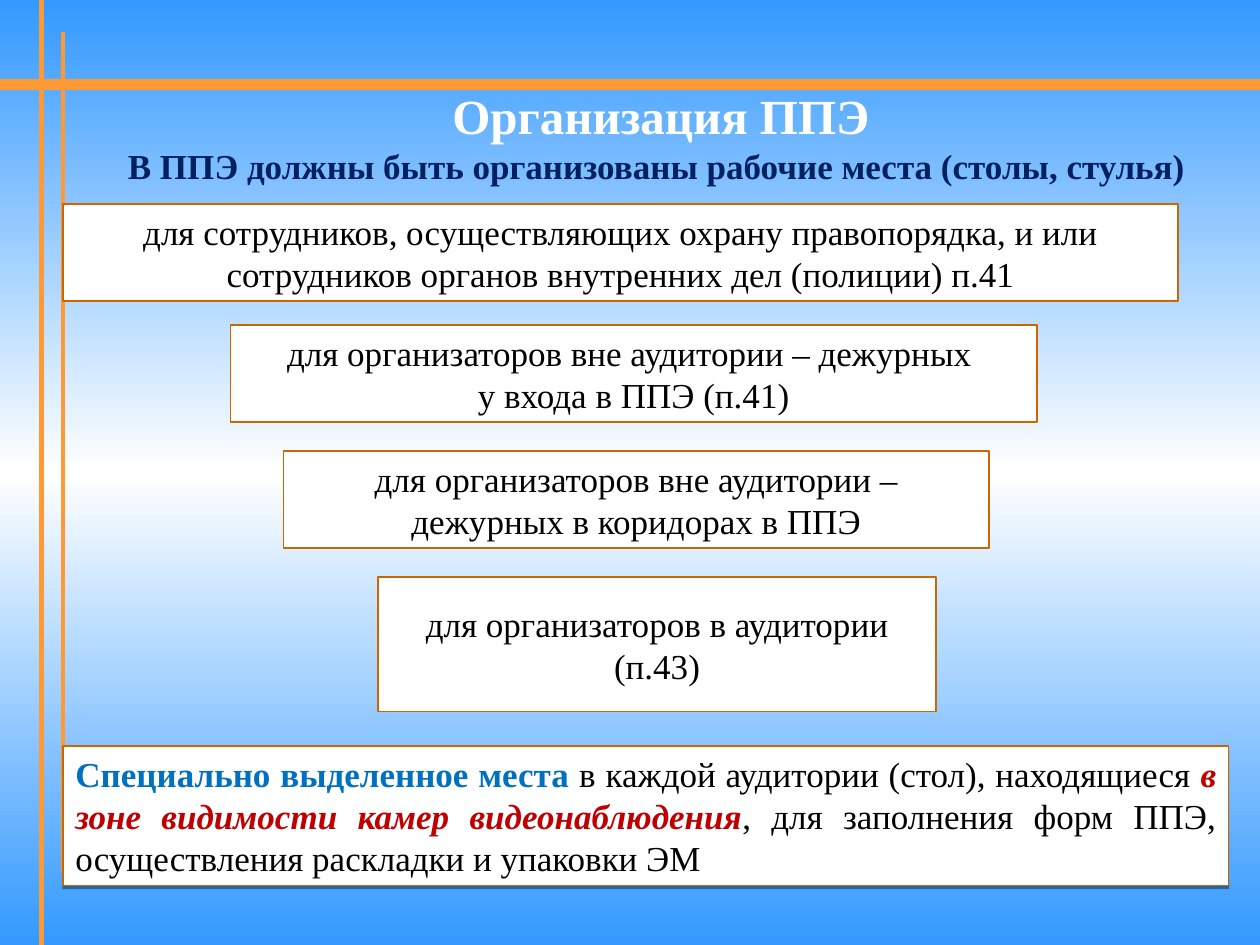
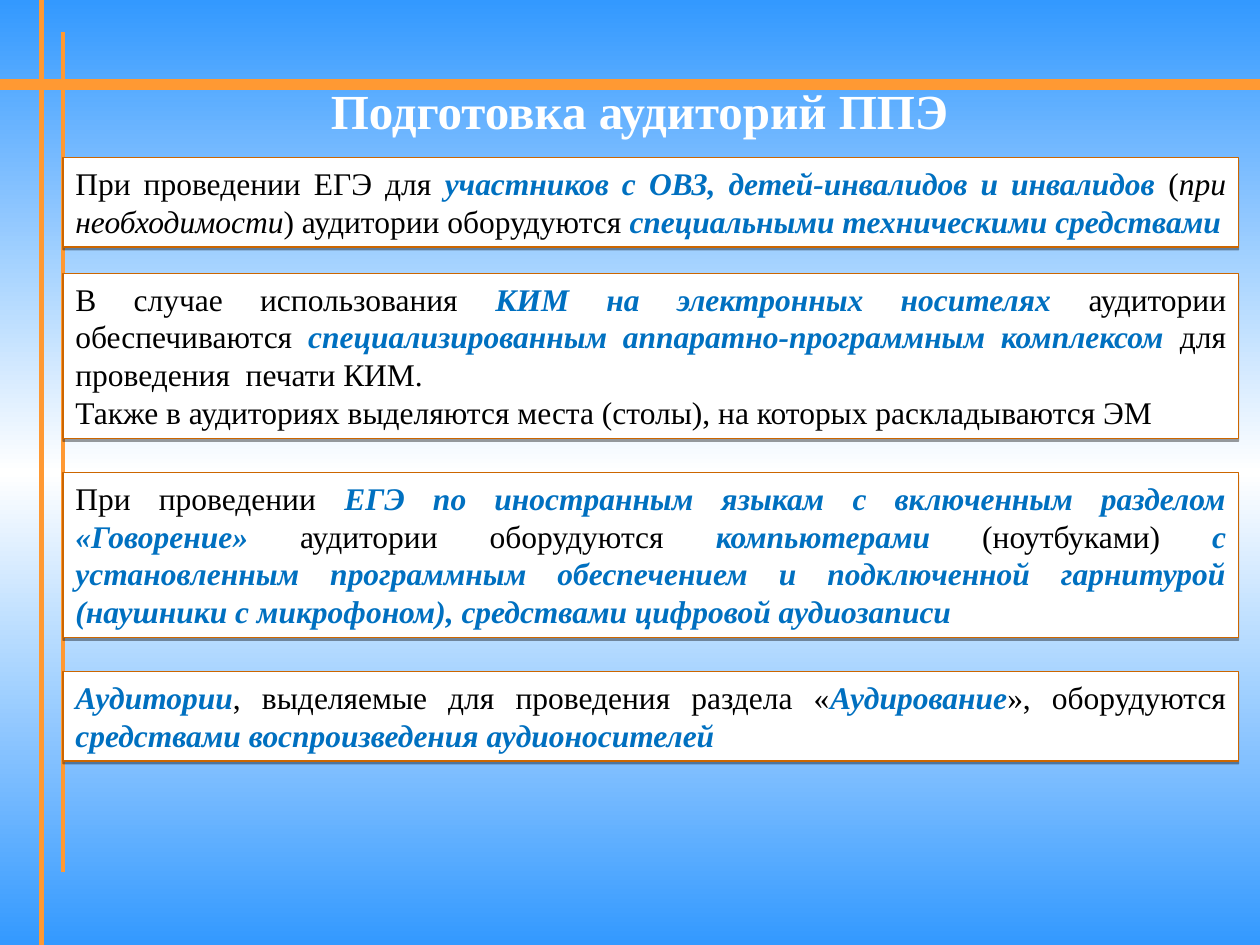
import copy
from dataclasses import dataclass

import pptx
import pptx.dml.color
import pptx.enum.dml
import pptx.enum.shapes
import pptx.enum.text
import pptx.oxml
import pptx.oxml.ns
import pptx.util
from pptx.util import Inches

RGBColor = pptx.dml.color.RGBColor
Align = pptx.enum.text.PP_ALIGN

SKY = RGBColor(0x33, 0x99, 0xFF)
WHITE = RGBColor(0xFF, 0xFF, 0xFF)
BLACK = RGBColor(0, 0, 0)
ORANGE = RGBColor(0xFF, 0x99, 0x33)
BROWN = RGBColor(0xCC, 0x66, 0x00)
NAVY = RGBColor(0x00, 0x20, 0x60)
BLUE = RGBColor(0x00, 0x70, 0xC0)
RED = RGBColor(0xC0, 0x00, 0x00)
FONT = "Times New Roman"
TITLE_ONLY = 5

STYLES = {
    "plain": dict(color=BLACK),
    "italic": dict(color=BLACK, italic=True),
    "bold": dict(color=BLUE, bold=True),
    "key": dict(color=BLUE, bold=True, italic=True),
    "alert": dict(color=RED, bold=True, italic=True),
    "title": dict(color=WHITE, bold=True, size=pptx.util.Pt(28)),
    "subtitle": dict(color=NAVY, bold=True, size=pptx.util.Pt(20)),
}

Run = tuple[str, str]  # text, style name
Paragraph = list[Run]


@dataclass
class Rule:
    x1: float
    y1: float
    x2: float
    y2: float
    width: float


@dataclass
class Box:
    left: float
    top: float
    width: float
    height: float
    paragraphs: list[Paragraph]
    size: int = 20
    align: Align = Align.CENTER
    shadow: bool = False
    inset_y: float = 0.05


@dataclass
class Page:
    title_at: tuple[float, float, float, float]
    title: list[Paragraph]
    boxes: list[Box]


RULES = [
    Rule(0, 0.67, 10, 0.67, 6),
    Rule(0.33, 0, 0.33, 7.5, 3),
    Rule(0.5, 0.25, 0.5, 6.92, 2.25),
]


def room_box(top: float, height: float, paragraphs: list[Paragraph]) -> Box:
    """Full-width justified box of the second slide."""
    return Box(0.5, top, 9.33, height, paragraphs, 18, Align.JUSTIFY, True)


PAGES = [
    Page(
        (0.66, 0.83, 9.17, 0.5),
        [
            [("Организация ППЭ", "title")],
            [("В ППЭ должны быть организованы рабочие места (столы, стулья) ", "subtitle")],
        ],
        [
            Box(0.5, 1.62, 8.85, 0.77, [[(
                "для сотрудников, осуществляющих охрану правопорядка, и или "
                "сотрудников органов внутренних дел (полиции) п.41", "plain")]]),
            Box(1.83, 2.58, 6.4, 0.77, [
                [("для организаторов вне аудитории – дежурных ", "plain")],
                [("у входа в ППЭ (п.41)", "plain")],
            ]),
            Box(2.25, 3.58, 5.6, 0.77, [[(
                "для организаторов вне аудитории – дежурных в коридорах в ППЭ", "plain")]]),
            Box(3, 4.58, 4.43, 1.07, [[(
                "для организаторов в аудитории (п.43)", "plain")]], inset_y=0.2),
            Box(0.5, 5.92, 9.25, 1.11, [[
                ("Специально выделенное места ", "bold"),
                ("в каждой аудитории (стол), находящиеся ", "plain"),
                ("в зоне видимости камер видеонаблюдения", "alert"),
                (", для заполнения форм ППЭ, осуществления раскладки и упаковки ЭМ", "plain"),
            ]], align=Align.JUSTIFY, shadow=True),
        ],
    ),
    Page(
        (0.42, 0.58, 9.31, 0.58),
        [[("Подготовка аудиторий ППЭ", "title")]],
        [
            room_box(1.25, 0.71, [[
                ("При проведении ЕГЭ для ", "plain"),
                ("участников с ОВЗ, детей-инвалидов и инвалидов ", "key"),
                ("(", "plain"),
                ("при необходимости", "italic"),
                (") аудитории оборудуются ", "plain"),
                ("специальными техническими средствами", "key"),
            ]]),
            room_box(2.17, 1.31, [
                [
                    ("В случае использования ", "plain"),
                    ("КИМ на электронных носителях ", "key"),
                    ("аудитории обеспечиваются ", "plain"),
                    ("специализированным аппаратно-программным комплексом ", "key"),
                    ("для проведения  печати КИМ.", "plain"),
                ],
                [("Также в аудиториях выделяются места (столы), "
                  "на которых раскладываются ЭМ", "plain")],
            ]),
            room_box(3.75, 1.31, [[
                ("При проведении ", "plain"),
                ("ЕГЭ по иностранным языкам с включенным разделом «Говорение» ", "key"),
                ("аудитории оборудуются ", "plain"),
                ("компьютерами", "key"),
                (" (ноутбуками) ", "plain"),
                ("с установленным программным обеспечением и подключенной гарнитурой "
                 "(наушники с микрофоном), средствами цифровой аудиозаписи", "key"),
            ]]),
            room_box(5.33, 0.71, [[
                ("Аудитории", "key"),
                (", выделяемые для проведения раздела «", "plain"),
                ("Аудирование", "key"),
                ("», оборудуются ", "plain"),
                ("средствами воспроизведения аудионосителей", "key"),
            ]]),
        ],
    ),
]


def set_background(master: pptx.slide.SlideMaster) -> None:
    fill = master.background.fill
    fill.gradient()
    fill.gradient_angle = 270
    stops = master.element.find(".//" + pptx.oxml.ns.qn("a:gsLst"))
    stops.insert(1, copy.deepcopy(stops[0]))
    for stop, color, position in zip(fill.gradient_stops, (SKY, WHITE, SKY), (0, 0.5, 1)):
        stop.color.rgb = color
        stop.position = position


def add_rule(s: pptx.slide.Slide, rule: Rule) -> None:
    line = s.shapes.add_connector(
        pptx.enum.shapes.MSO_CONNECTOR.STRAIGHT,
        *map(Inches, (rule.x1, rule.y1, rule.x2, rule.y2)))
    line.line.color.rgb = ORANGE
    line.line.width = pptx.util.Pt(rule.width)
    pptx.oxml.ns.qn("a:effectLst")
    line.element.spPr.append(pptx.oxml.parse_xml(
        f'<a:effectLst {pptx.oxml.ns.nsdecls("a")}/>'))


def write(tf: pptx.text.text.TextFrame, paragraphs: list[Paragraph],
          align: Align, size: int = 20) -> None:
    tf.word_wrap = True
    for i, runs in enumerate(paragraphs):
        p = tf.add_paragraph() if i else tf.paragraphs[0]
        p.alignment = align
        for text, style in runs:
            r = p.add_run()
            r.text = text
            look = dict(name=FONT, size=pptx.util.Pt(size), bold=False, italic=False)
            look |= STYLES[style]
            r.font.color.rgb = look.pop("color")
            for name, value in look.items():
                setattr(r.font, name, value)


def add_drop_shadow(sp: pptx.shapes.autoshape.Shape) -> None:
    effects = sp.element.spPr.find(pptx.oxml.ns.qn("a:effectLst"))
    effects.append(pptx.oxml.parse_xml(
        f'<a:outerShdw {pptx.oxml.ns.nsdecls("a")} blurRad="0" dist="20000" '
        'dir="5400000" rotWithShape="0"><a:srgbClr val="000000">'
        '<a:alpha val="38000"/></a:srgbClr></a:outerShdw>'))


def add_box(s: pptx.slide.Slide, box: Box) -> None:
    sp = s.shapes.add_shape(
        pptx.enum.shapes.MSO_SHAPE.RECTANGLE,
        *map(Inches, (box.left, box.top, box.width, box.height)))
    sp.fill.solid()
    sp.fill.fore_color.rgb = WHITE
    sp.line.color.rgb = BROWN
    sp.line.width = pptx.util.Pt(0.75)
    sp.shadow.inherit = False
    if box.shadow:
        add_drop_shadow(sp)
    tf = sp.text_frame
    frame = dict(
        margin_top=Inches(box.inset_y), margin_bottom=Inches(box.inset_y),
        vertical_anchor=pptx.enum.text.MSO_ANCHOR.TOP,
        auto_size=pptx.enum.text.MSO_AUTO_SIZE.SHAPE_TO_FIT_TEXT)
    for name, value in frame.items():
        setattr(tf, name, value)
    write(tf, box.paragraphs, box.align, box.size)


def set_title(s: pptx.slide.Slide, page: Page) -> None:
    sp = s.shapes.title
    for name, value in zip(("left", "top", "width", "height"), page.title_at):
        setattr(sp, name, Inches(value))
    tf = sp.text_frame
    tf.auto_size = pptx.enum.text.MSO_AUTO_SIZE.NONE
    tf.vertical_anchor = pptx.enum.text.MSO_ANCHOR.MIDDLE
    write(tf, page.title, Align.CENTER)


def main() -> None:
    prs = pptx.Presentation()
    prs.slide_width, prs.slide_height = Inches(10), Inches(7.5)
    set_background(prs.slide_master)
    for page in PAGES:
        s = prs.slides.add_slide(prs.slide_layouts[TITLE_ONLY])
        for rule in RULES:
            add_rule(s, rule)
        set_title(s, page)
        for box in page.boxes:
            add_box(s, box)
    prs.save("out.pptx")


if __name__ == "__main__":
    main()
